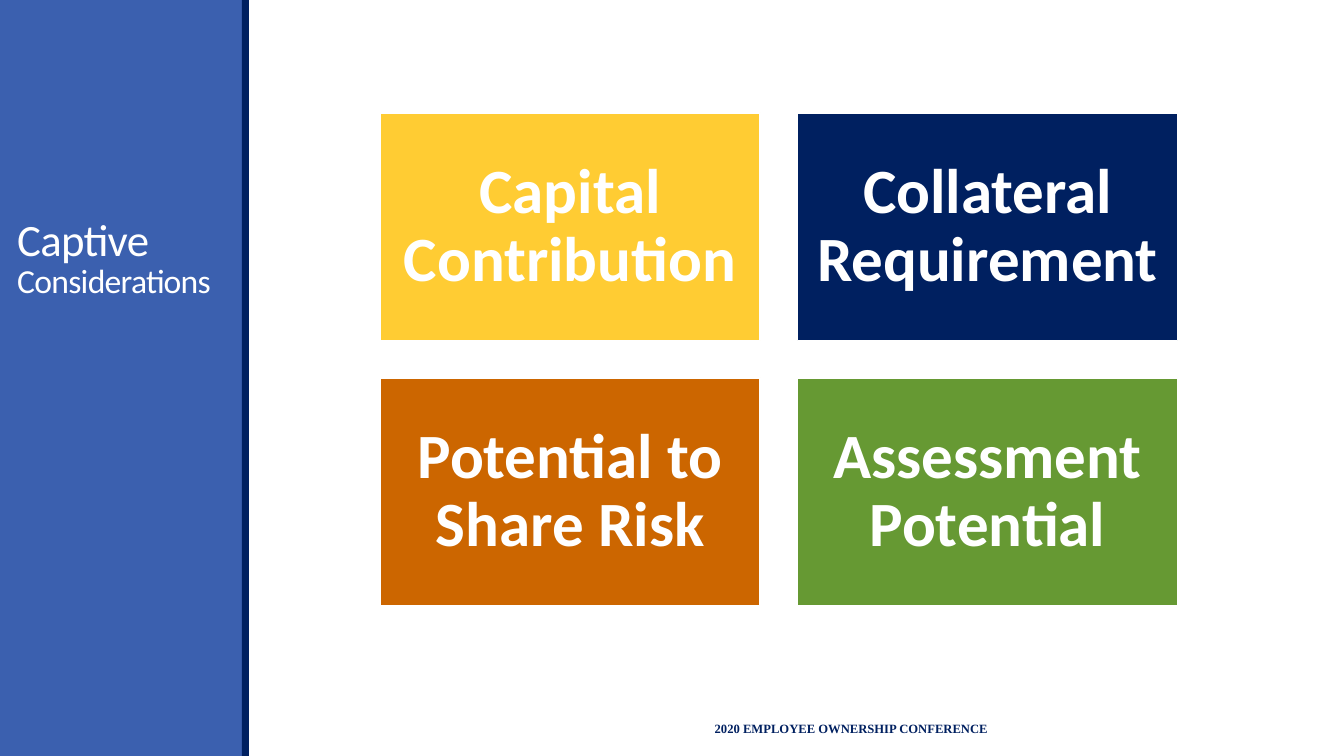
from pptx import Presentation
from pptx.dml.color import RGBColor
from pptx.enum.shapes import MSO_SHAPE
from pptx.enum.text import MSO_ANCHOR, MSO_AUTO_SIZE, PP_ALIGN
from pptx.util import Inches, Pt

COLORS = {
    "white": "FFFFFF",
    "blue": "3B60AF",
    "navy": "002060",
    "yellow": "FFCC33",
    "orange": "CC6600",
    "green": "669933",
}


def color(name):
    return RGBColor.from_string(COLORS[name])


def apply(target, **values):
    for name, value in values.items():
        setattr(target, name, value)


class SlideBuilder:
    body_font = "Calibri"
    footer_font = "Times New Roman"

    def __init__(self, page):
        self.page = page

    def rectangle(self, left, top, width, height, fill, outline=None):
        box = self.page.shapes.add_shape(
            MSO_SHAPE.RECTANGLE, Inches(left), Inches(top), Inches(width), Inches(height)
        )
        box.shadow.inherit = False
        box.fill.solid()
        box.fill.fore_color.rgb = color(fill)
        if outline:
            box.line.color.rgb = color(outline)
            box.line.width = Pt(1.25)
        else:
            box.line.fill.background()
        return box

    def frame(self, box, anchor, inset_x=0.1, inset_y=0.05):
        apply(
            box.text_frame,
            word_wrap=True,
            auto_size=MSO_AUTO_SIZE.NONE,
            vertical_anchor=anchor,
            margin_left=Inches(inset_x),
            margin_right=Inches(inset_x),
            margin_top=Inches(inset_y),
            margin_bottom=Inches(inset_y),
        )
        return box.text_frame.paragraphs[0]

    def span(self, para, text, size, ink="white", font=body_font, bold=False):
        span = para.add_run()
        span.text = text
        apply(span.font, name=font, size=Pt(size), bold=bold)
        span.font.color.rgb = color(ink)
        return span

    def title(self, parts):
        box = self.page.shapes.title
        apply(box, left=Inches(0.07), top=Inches(0.53), width=Inches(2.4), height=Inches(2.5))
        para = self.frame(box, MSO_ANCHOR.BOTTOM)
        apply(para, alignment=PP_ALIGN.LEFT, line_spacing=0.85)
        for text, size in parts:
            span = self.span(para, text, size)
            span.font._element.set("spc", "-50")
        self.page.shapes._spTree.append(box._element)

    def card(self, left, top, width, height, fill, text):
        box = self.rectangle(left, top, width, height, fill, "white")
        para = self.frame(box, MSO_ANCHOR.MIDDLE, 0.18, 0.18)
        apply(para, alignment=PP_ALIGN.CENTER, line_spacing=0.9)
        self.span(para, text, 45, bold=True)

    def footer(self, text):
        box = self.page.shapes.add_textbox(Inches(6.99), Inches(7.03), Inches(4.06), Inches(0.4))
        para = self.frame(box, MSO_ANCHOR.MIDDLE)
        self.span(para, text, 9, "navy", self.footer_font, True)


def main():
    deck = Presentation()
    apply(deck, slide_width=Inches(13.33), slide_height=Inches(7.5))
    builder = SlideBuilder(deck.slides.add_slide(deck.slide_layouts[5]))

    builder.rectangle(0, 0, 2.47, 7.5, "blue")
    builder.rectangle(2.4, 0, 0.07, 7.5, "navy")
    builder.title([("Captive", 32), (" Considerations", 24)])

    considerations = [
        ("Capital Contribution", "yellow"),
        ("Collateral Requirement", "navy"),
        ("Potential to Share Risk", "orange"),
        ("Assessment Potential", "green"),
    ]
    width, height = 3.77, 2.26
    for index, (text, fill) in enumerate(considerations):
        row, column = divmod(index, 2)
        builder.card(3.77 + column * 4.14, 1.12 + row * 2.63, width, height, fill, text)

    builder.footer("2020 EMPLOYEE OWNERSHIP CONFERENCE")
    deck.save("out.pptx")


if __name__ == "__main__":
    main()
